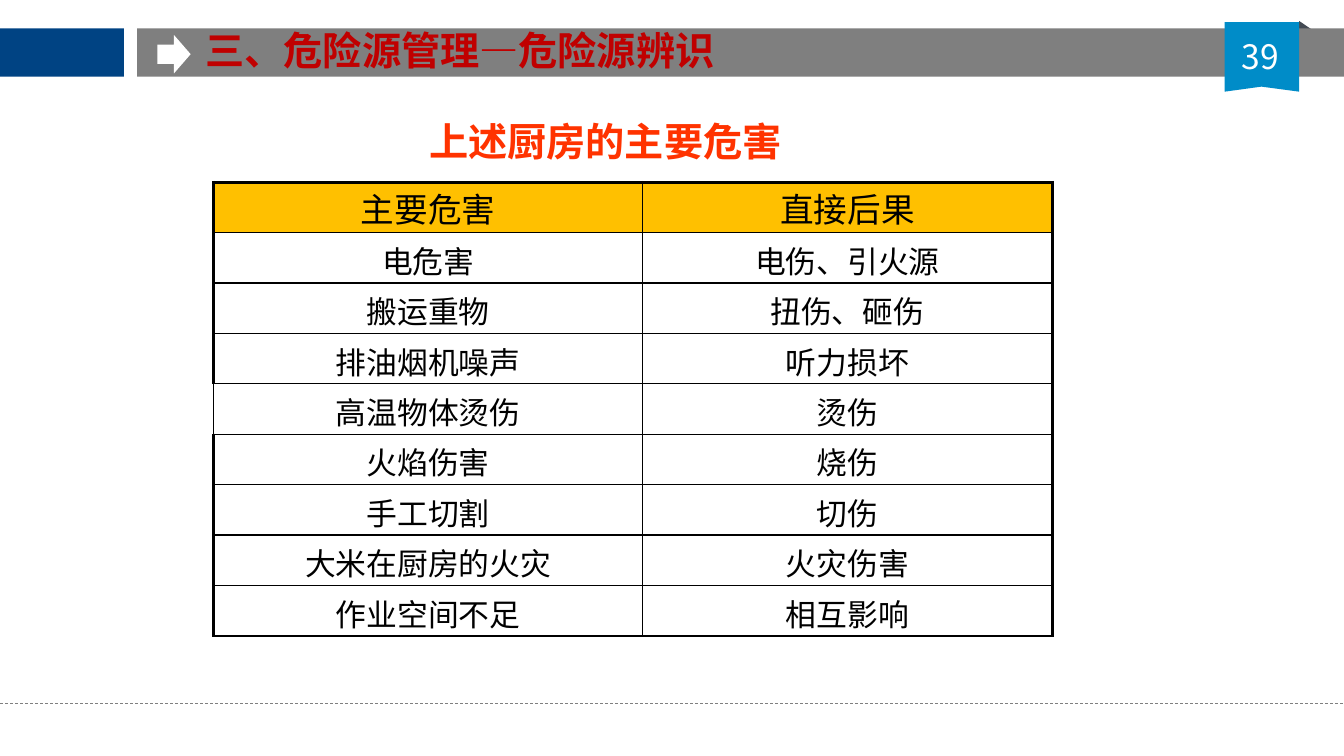
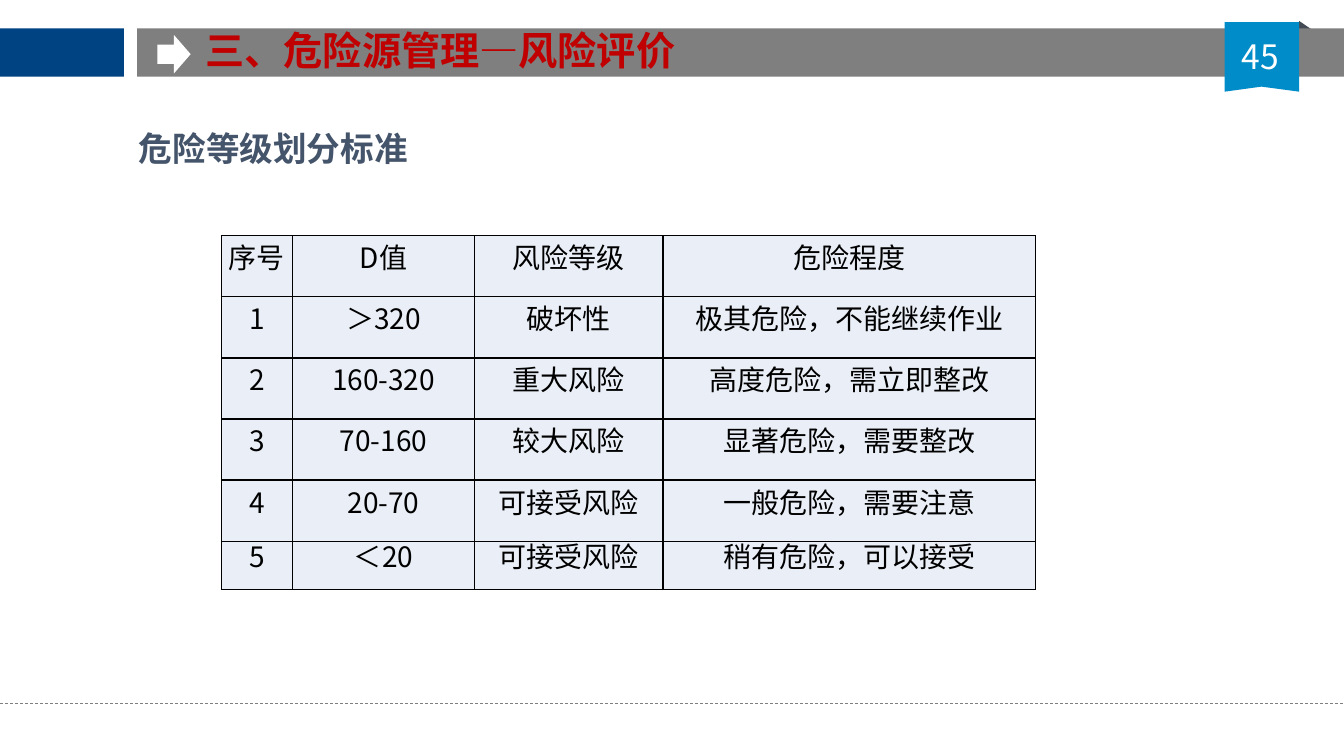
from dataclasses import dataclass
from typing import Optional

from lxml import etree
from pptx import Presentation
from pptx.dml.color import RGBColor
from pptx.enum import dml, shapes, text
from pptx.oxml import ns
from pptx.util import Pt

COLORS = {
    "navy": "004383", "gray": "7F7F7F", "ribbon": "008CC8", "fold": "434A53",
    "white": "FFFFFF", "black": "000000", "title": "C00000", "orange": "FF3300",
    "slate": "44546A", "amber": "FFC000", "pale": "EAEFF7",
}
CJK = "Noto Sans CJK SC"
SLIDE_W, SLIDE_H = 960, 540
THIN, THICK = 1, 2.25


@dataclass(frozen=True)
class Box:
    left: float
    top: float
    width: float
    height: float

    def points(self) -> tuple:
        return Pt(self.left), Pt(self.top), Pt(self.width), Pt(self.height)


@dataclass(frozen=True)
class TextStyle:
    size: float
    color: str
    font: str = CJK
    bold: bool = False
    align: text.PP_ALIGN = text.PP_ALIGN.LEFT
    line_pitch: Optional[float] = None


@dataclass(frozen=True)
class CellStyle:
    text: TextStyle
    fill: Optional[str]
    side_margin: float
    top_margin: float
    bottom_margin: float


@dataclass(frozen=True)
class Grid:
    left: float
    top: float
    columns: tuple
    heights: tuple
    rows: tuple
    header: CellStyle
    body: CellStyle
    frame: float = THIN
    thin_left_rows: tuple = ()


@dataclass(frozen=True)
class Band:
    kind: shapes.MSO_SHAPE
    box: Box
    color: str


SHAPE = shapes.MSO_SHAPE
BANDS = (
    Band(SHAPE.RIGHT_TRIANGLE, Box(928, 15, 8.6, 5.8), "fold"),
    Band(SHAPE.RECTANGLE, Box(0, 20.2, 88.6, 34.6), "navy"),
    Band(SHAPE.RECTANGLE, Box(98, 20.2, 862, 34.6), "gray"),
    Band(SHAPE.RIGHT_ARROW, Box(112.4, 25, 23.8, 27.4), "white"),
)
RIBBON = ((874.8, 65.5), (874.8, 15.8), (928, 15.8), (928, 65.5), (901, 61.9))

TITLE = TextStyle(28, "title", bold=True)
PAGE_NUMBER = TextStyle(24, "white", align=text.PP_ALIGN.CENTER)
HAZARD_HEADING = TextStyle(28, "orange", "Times New Roman", True)
LEVEL_HEADING = TextStyle(24, "slate", bold=True)

HAZARD_HEADER = CellStyle(
    TextStyle(24, "black", "Arial", align=text.PP_ALIGN.CENTER), "amber", 7.2, 1, 0)
HAZARD_BODY = CellStyle(
    TextStyle(22, "black", "Arial", align=text.PP_ALIGN.CENTER), None, 7.2, 3, 0)
LEVEL_CELL = CellStyle(
    TextStyle(20, "black", align=text.PP_ALIGN.CENTER, line_pitch=15),
    "pale", 0.7, 0.7, 0.7)

HAZARDS = Grid(
    152.6, 130.2, (306.4, 292.6), (36,) * 9,
    (
        ("主要危害", "直接后果"),
        ("电危害", "电伤、引火源"),
        ("搬运重物", "扭伤、砸伤"),
        ("排油烟机噪声", "听力损坏"),
        ("高温物体烫伤", "烫伤"),
        ("火焰伤害", "烧伤"),
        ("手工切割", "切伤"),
        ("大米在厨房的火灾", "火灾伤害"),
        ("作业空间不足", "相互影响"),
    ),
    HAZARD_HEADER, HAZARD_BODY, THICK, thin_left_rows=(4,))

LEVELS = Grid(
    158.2, 168.4, (50.8, 130, 134.6, 266.2), (43.65,) * 5 + (34.3,),
    (
        ("序号", "D值", "风险等级", "危险程度"),
        ("1", "＞320", "破坏性", "极其危险，不能继续作业"),
        ("2", "160-320", "重大风险", "高度危险，需立即整改"),
        ("3", "70-160", "较大风险", "显著危险，需要整改"),
        ("4", "20-70", "可接受风险", "一般危险，需要注意"),
        ("5", "＜20", "可接受风险", "稍有危险，可以接受"),
    ),
    LEVEL_CELL, LEVEL_CELL)


def rgb(name: str) -> RGBColor:
    return RGBColor.from_string(COLORS[name])


def paint(shape, color: str) -> None:
    shape.shadow.inherit = False
    shape.fill.solid()
    shape.fill.fore_color.rgb = rgb(color)
    shape.line.fill.background()


def write(paragraph, words: str, style: TextStyle) -> None:
    run = paragraph.add_run()
    run.text = words
    paragraph.alignment = style.align
    if style.line_pitch:
        paragraph.line_spacing = Pt(style.line_pitch)
    font = paragraph.font
    font.name, font.size, font.bold = style.font, Pt(style.size), style.bold
    font.color.rgb = rgb(style.color)
    # East Asian glyphs need their own typeface next to the Latin one.
    latin = font._element.find(ns.qn("a:latin"))
    east_asian = etree.Element(ns.qn("a:ea"), typeface=CJK)
    latin.addnext(east_asian)


def add_text(slide, box: Box, words: str, style: TextStyle) -> None:
    frame = slide.shapes.add_textbox(*box.points()).text_frame
    frame.word_wrap = True
    frame.vertical_anchor = text.MSO_ANCHOR.MIDDLE
    frame.margin_top = frame.margin_bottom = 0
    write(frame.paragraphs[0], words, style)


def add_ribbon(slide) -> None:
    start, *others = [(Pt(x), Pt(y)) for x, y in RIBBON]
    outline = slide.shapes.build_freeform(*start)
    outline.add_line_segments(others, close=True)
    paint(outline.convert_to_shape(), "ribbon")


def add_footer_rule(slide) -> None:
    rule = slide.shapes.add_connector(
        shapes.MSO_CONNECTOR.STRAIGHT, 0, Pt(502.4), Pt(SLIDE_W), Pt(502.4))
    rule.line.color.rgb = rgb("gray")
    rule.line.width = Pt(0.5)
    rule.line.dash_style = dml.MSO_LINE.DASH
    etree.SubElement(rule._element.spPr, ns.qn("a:effectLst"))


def set_borders(cell, widths: dict) -> None:
    """Draw black cell edges; widths maps L, R, T, B (in that order) to points."""
    properties = cell._tc.get_or_add_tcPr()
    for side, width in widths.items():
        edge = etree.SubElement(properties, ns.qn(f"a:ln{side}"), w=str(int(Pt(width))))
        fill = etree.SubElement(edge, ns.qn("a:solidFill"))
        etree.SubElement(fill, ns.qn("a:srgbClr"), val=COLORS["black"])


def fill_cell(cell, words: str, style: CellStyle) -> None:
    cell.margin_left = cell.margin_right = Pt(style.side_margin)
    cell.margin_top = Pt(style.top_margin)
    cell.margin_bottom = Pt(style.bottom_margin)
    cell.vertical_anchor = text.MSO_ANCHOR.MIDDLE
    if style.fill:
        cell.fill.solid()
        cell.fill.fore_color.rgb = rgb(style.fill)
    else:
        cell.fill.background()
    write(cell.text_frame.paragraphs[0], words, style.text)


def add_grid(slide, grid: Grid) -> None:
    box = Box(grid.left, grid.top, sum(grid.columns), sum(grid.heights))
    last_row, last_column = len(grid.rows) - 1, len(grid.columns) - 1
    table = slide.shapes.add_table(last_row + 1, last_column + 1, *box.points()).table
    table.first_row = table.horz_banding = False
    for column, width in zip(table.columns, grid.columns):
        column.width = Pt(width)
    for r, (words_in_row, height) in enumerate(zip(grid.rows, grid.heights)):
        table.rows[r].height = Pt(height)
        for c, words in enumerate(words_in_row):
            framed = {
                "L": c == 0 and r not in grid.thin_left_rows,
                "R": c == last_column,
                "T": r == 0,
                "B": r == last_row,
            }
            cell = table.cell(r, c)
            set_borders(cell, {side: grid.frame if outer else THIN
                               for side, outer in framed.items()})
            fill_cell(cell, words, grid.body if r else grid.header)


def add_base_slide(deck, title: str, page: int):
    """Add a slide with the shared bands, ribbon, footer rule and title."""
    slide = deck.slides.add_slide(deck.slide_layouts[6])
    for band in BANDS:
        paint(slide.shapes.add_shape(band.kind, *band.box.points()), band.color)
    add_ribbon(slide)
    add_footer_rule(slide)
    add_text(slide, Box(139.7, 15.4, 728, 41), title, TITLE)
    add_text(slide, Box(866, 25.5, 68.4, 28.8), str(page), PAGE_NUMBER)
    return slide


def main() -> None:
    deck = Presentation()
    deck.slide_width, deck.slide_height = Pt(SLIDE_W), Pt(SLIDE_H)

    hazards = add_base_slide(deck, "三、危险源管理—危险源辨识", 39)
    add_text(hazards, Box(299.5, 80, 444, 41), "上述厨房的主要危害", HAZARD_HEADING)
    add_grid(hazards, HAZARDS)

    levels = add_base_slide(deck, "三、危险源管理—风险评价", 45)
    add_text(levels, Box(92.2, 89, 210, 33), "危险等级划分标准", LEVEL_HEADING)
    add_grid(levels, LEVELS)

    deck.save("out.pptx")


if __name__ == "__main__":
    main()
